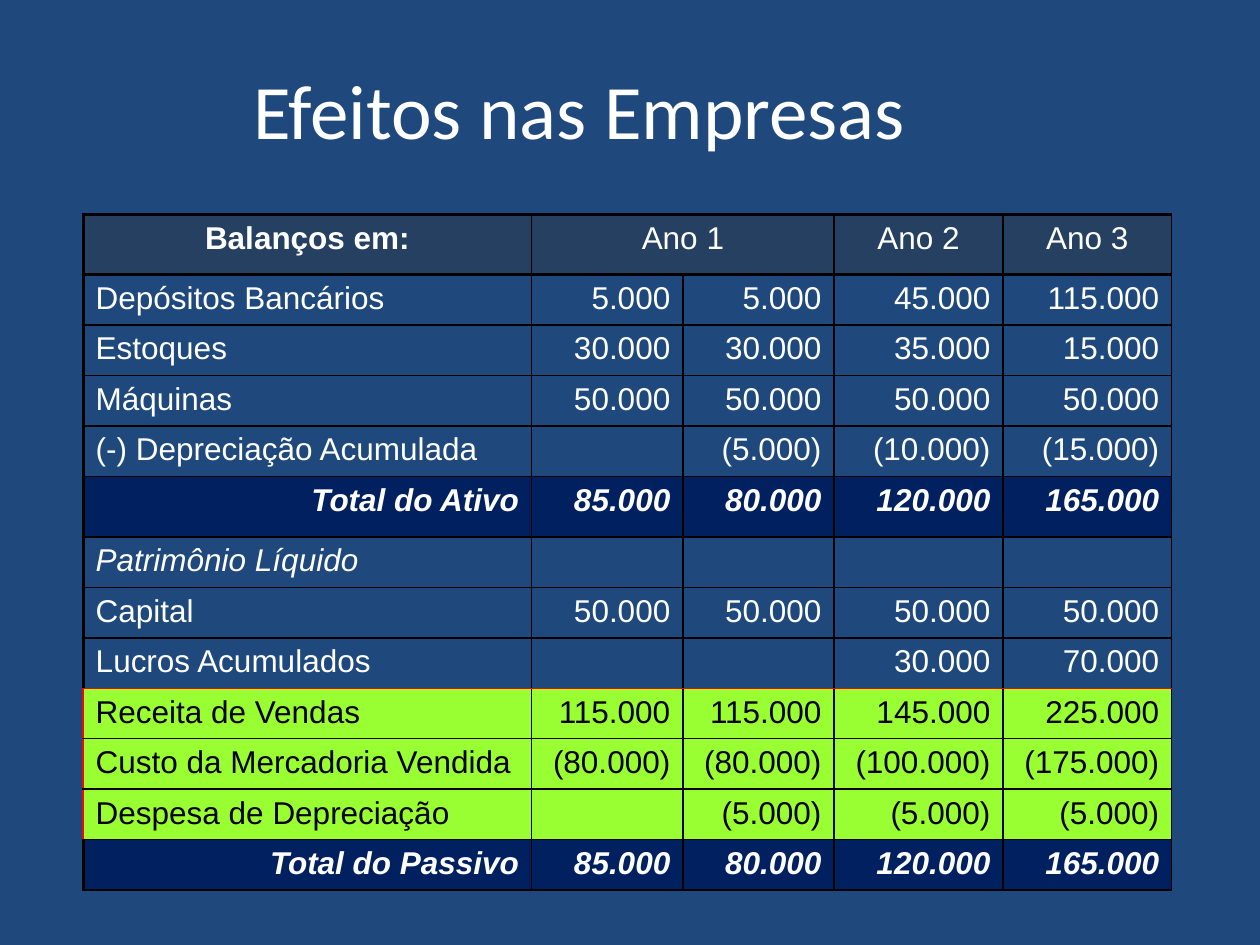
"""Build a slide with a three-year balance sheet table."""
from dataclasses import dataclass
from typing import Optional

from lxml import etree
from pptx import Presentation
from pptx import util as u
from pptx.dml.color import RGBColor
from pptx.enum import text
from pptx.oxml.ns import qn


@dataclass(frozen=True)
class Theme:
    background: str = "1F497D"
    light: str = "FFFFFF"
    dark: str = "000000"
    header: str = "254061"
    total: str = "002060"
    result: str = "99FF33"
    accent: str = "FF0000"
    title_font: str = "Calibri"
    body_font: str = "Arial"
    title_size: int = 44
    body_size: int = 18
    thin: int = 1
    thick: int = 2


THEME = Theme()
LEFT, CENTER, RIGHT = text.PP_ALIGN.LEFT, text.PP_ALIGN.CENTER, text.PP_ALIGN.RIGHT


@dataclass(frozen=True)
class RowStyle:
    fill: Optional[str] = None
    color: str = THEME.light
    edge: str = THEME.dark
    edge_width: int = THEME.thick
    height: float = 0.38
    label_align: text.PP_ALIGN = LEFT
    value_align: text.PP_ALIGN = RIGHT
    label_bold: bool = False
    value_bold: bool = False
    italic: bool = False


@dataclass(frozen=True)
class Row:
    label: str
    values: tuple[str, ...]
    style: RowStyle


HEADER = RowStyle(fill=THEME.header, height=0.48, label_align=CENTER,
                  value_align=CENTER, label_bold=True)
PLAIN = RowStyle()
SECTION = RowStyle(italic=True)
RESULT = RowStyle(fill=THEME.result, color=THEME.dark, edge=THEME.accent, edge_width=THEME.thin)
ASSETS = RowStyle(fill=THEME.total, height=0.48, label_align=RIGHT,
                  label_bold=True, value_bold=True, italic=True)
LIABILITIES = RowStyle(fill=THEME.total, label_align=RIGHT,
                       label_bold=True, value_bold=True, italic=True)

COLUMNS = (3.56, 1.2, 1.2, 1.34, 1.34)
ROWS = (
    Row("Balanços em:", ("Ano 1", "", "Ano 2", "Ano 3"), HEADER),
    Row("Depósitos Bancários", ("5.000", "5.000", "45.000", "115.000"), PLAIN),
    Row("Estoques", ("30.000", "30.000", "35.000", "15.000"), PLAIN),
    Row("Máquinas", ("50.000",) * 4, PLAIN),
    Row("(-) Depreciação Acumulada", ("", "(5.000)", "(10.000)", "(15.000)"), PLAIN),
    Row("Total do Ativo", ("85.000", "80.000", "120.000", "165.000"), ASSETS),
    Row("Patrimônio Líquido", ("",) * 4, SECTION),
    Row("Capital", ("50.000",) * 4, PLAIN),
    Row("Lucros Acumulados", ("", "", "30.000", "70.000"), PLAIN),
    Row("Receita de Vendas", ("115.000", "115.000", "145.000", "225.000"), RESULT),
    Row("Custo da Mercadoria Vendida", ("(80.000)", "(80.000)", "(100.000)", "(175.000)"), RESULT),
    Row("Despesa de Depreciação", ("", "(5.000)", "(5.000)", "(5.000)"), RESULT),
    Row("Total do Passivo", ("85.000", "80.000", "120.000", "165.000"), LIABILITIES),
)


def write(para, words: str, font: str, size: int, color: str, align: text.PP_ALIGN,
          bold: bool = False, italic: bool = False) -> None:
    """Fill a paragraph with uniformly styled text."""
    para.text = words
    para.alignment = align
    para.font.name, para.font.size = font, u.Pt(size)
    para.font.bold, para.font.italic = bold, italic
    para.font.color.rgb = RGBColor.from_string(color)


def set_border(cell, side: str, color: str, width: int) -> None:
    """Draw one side of a table cell."""
    properties = cell._tc.get_or_add_tcPr()
    line = etree.SubElement(properties, qn(f"a:ln{side}"), w=str(u.Pt(width)))
    fill = etree.SubElement(line, qn("a:solidFill"))
    etree.SubElement(fill, qn("a:srgbClr"), val=color)


def horizontal_border(index: int) -> tuple[str, int]:
    """Return colour and width of the rule above the row at index."""
    above = ROWS[index - 1].style if index else None
    below = ROWS[index].style if index < len(ROWS) else None
    color = THEME.accent if below is RESULT and above is not RESULT else THEME.dark
    return color, THEME.thick if HEADER in (above, below) else THEME.thin


def draw_cell(cell, row: Row, row_index: int, column: int) -> None:
    """Format one cell and write its text."""
    style = row.style
    is_label = column == 0
    edge = (style.edge, style.edge_width) if is_label else (THEME.dark, THEME.thin)
    set_border(cell, "L", *edge)
    set_border(cell, "R", THEME.dark, THEME.thin)
    set_border(cell, "T", *horizontal_border(row_index))
    set_border(cell, "B", *horizontal_border(row_index + 1))
    if style.fill:
        cell.fill.solid()
        cell.fill.fore_color.rgb = RGBColor.from_string(style.fill)
    else:
        cell.fill.background()
    write(cell.text_frame.paragraphs[0], row.label if is_label else row.values[column - 1],
          THEME.body_font, THEME.body_size, style.color,
          style.label_align if is_label else style.value_align,
          style.label_bold if is_label else style.value_bold, style.italic)


def draw_title(page, deck, words: str) -> None:
    """Place the slide title."""
    box = page.shapes.add_textbox(int(deck.slide_width * 0.05), int(deck.slide_height * 0.02),
                                  int(deck.slide_width * 0.82), int(deck.slide_height * 0.19))
    box.text_frame.word_wrap = True
    box.text_frame.vertical_anchor = text.MSO_ANCHOR.MIDDLE
    write(box.text_frame.paragraphs[0], words, THEME.title_font, THEME.title_size,
          THEME.light, CENTER)


def draw_table(page) -> None:
    """Place the balance sheet."""
    height = sum(row.style.height for row in ROWS)
    table = page.shapes.add_table(len(ROWS), len(COLUMNS), u.Inches(0.66), u.Inches(1.7),
                                  u.Inches(sum(COLUMNS)), u.Inches(height)).table
    table.first_row = table.horz_banding = False
    for column, width in zip(table.columns, COLUMNS):
        column.width = u.Inches(width)
    for row_index, row in enumerate(ROWS):
        table.rows[row_index].height = u.Inches(row.style.height)
        for column in range(len(COLUMNS)):
            draw_cell(table.cell(row_index, column), row, row_index, column)
    table.cell(0, 1).merge(table.cell(0, 2))


def main() -> None:
    """Build and save the deck."""
    deck = Presentation()
    deck.slide_width, deck.slide_height = u.Inches(10), u.Inches(7.5)
    page = deck.slides.add_slide(deck.slide_layouts[6])
    page.background.fill.solid()
    page.background.fill.fore_color.rgb = RGBColor.from_string(THEME.background)
    draw_title(page, deck, "Efeitos nas Empresas")
    draw_table(page)
    deck.save("out.pptx")


if __name__ == "__main__":
    main()
